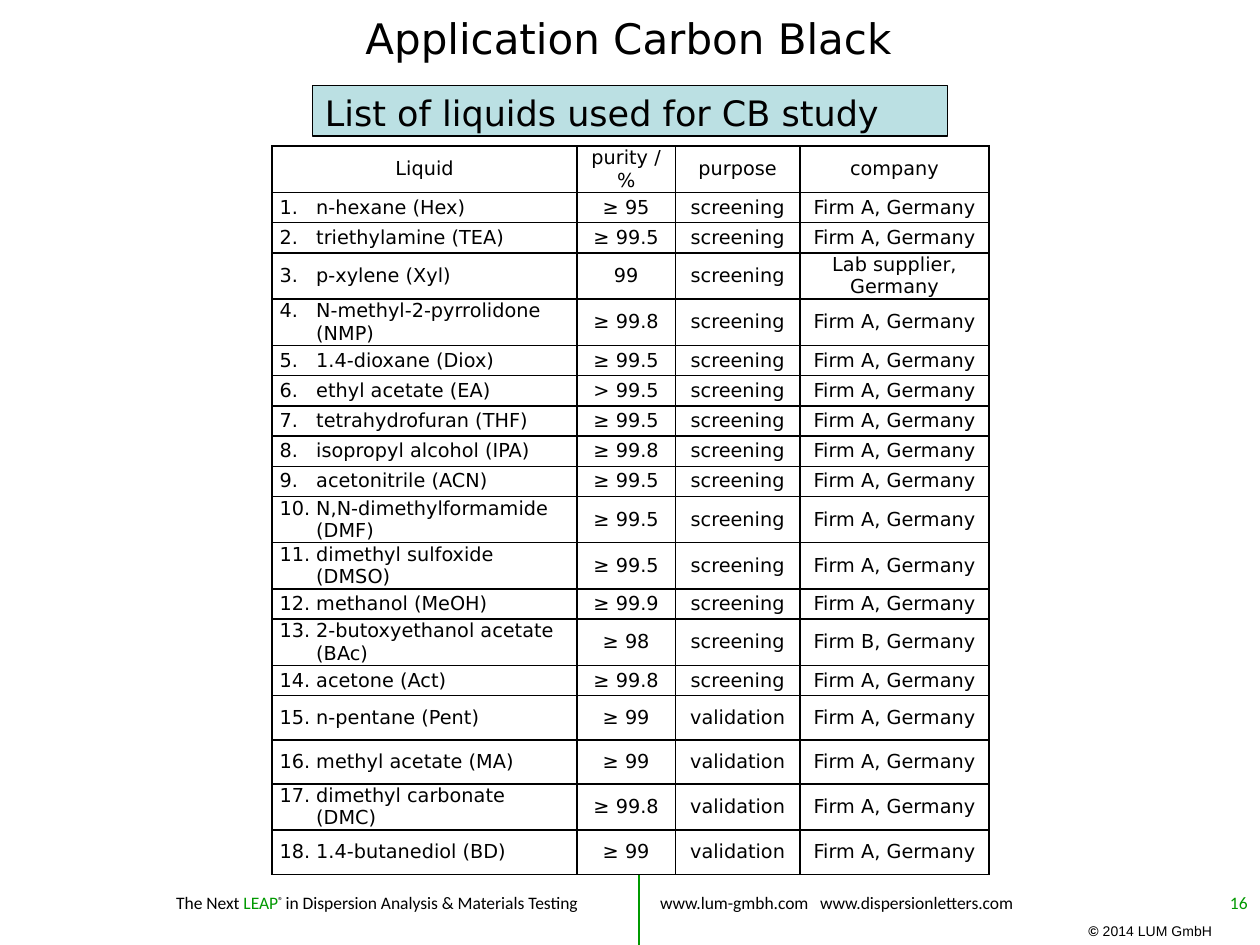
import dataclasses
import itertools

import lxml.etree
import pptx
import pptx.dml.color
import pptx.enum.shapes
import pptx.enum.text
import pptx.oxml.ns
import pptx.util

ALIGN = pptx.enum.text.PP_ALIGN
ANCHOR = pptx.enum.text.MSO_ANCHOR
FIT = pptx.enum.text.MSO_AUTO_SIZE
qn = pptx.oxml.ns.qn


@dataclasses.dataclass(frozen=True)
class Theme:
    ink: str = "000000"
    accent: str = "009900"
    banner: str = "BBE0E3"
    paper: str = "FFFFFF"
    main: str = "DejaVu Sans"
    foot: str = "Calibri"
    legal: str = "Arial"
    title_size: int = 24
    banner_size: int = 20
    table_size: int = 11
    foot_size: int = 10
    legal_size: int = 8


def rgb(value):
    return pptx.dml.color.RGBColor.from_string(value)


class Deck:
    """Holds the theme and the current slide, measured on a 100 by 75 grid."""

    def __init__(self, theme):
        self.theme = theme
        self.prs = pptx.Presentation()
        self.prs.slide_width = pptx.util.Inches(10)
        self.prs.slide_height = pptx.util.Inches(7.5)
        self.s = self.prs.slides.add_slide(self.prs.slide_layouts[5])

    def grid(self, *units):
        return [round(self.prs.slide_width * u / 100) for u in units]

    def style(self, p, font, size, color=None, align=ALIGN.LEFT):
        p.alignment = align
        p.font.name, p.font.size = font, pptx.util.Pt(size)
        p.font.color.rgb = rgb(color or self.theme.ink)

    def frame(self, sp, wrap=False, fit=FIT.NONE):
        tf = sp.text_frame
        tf.word_wrap, tf.auto_size, tf.vertical_anchor = wrap, fit, ANCHOR.TOP
        return tf.paragraphs[0]

    def title(self, text, *box):
        sp = self.s.shapes.title
        sp.left, sp.top, sp.width, sp.height = self.grid(*box)
        p = self.frame(sp, fit=FIT.SHAPE_TO_FIT_TEXT)
        p.text = text
        self.style(p, self.theme.main, self.theme.title_size)

    def banner(self, text, *box):
        sp = self.s.shapes.add_shape(pptx.enum.shapes.MSO_SHAPE.RECTANGLE, *self.grid(*box))
        sp.shadow.inherit = False
        sp.fill.solid()
        sp.fill.fore_color.rgb = rgb(self.theme.banner)
        sp.line.color.rgb = rgb(self.theme.ink)
        sp.line.width = pptx.util.Pt(0.75)
        p = self.frame(sp)
        p.text = text
        self.style(p, self.theme.main, self.theme.banner_size)

    def note(self, runs, *box, font=None, size=None, wrap=False, fit=FIT.SHAPE_TO_FIT_TEXT,
             align=ALIGN.LEFT, color=None, tab=None):
        p = self.frame(self.s.shapes.add_textbox(*self.grid(*box)), wrap, fit)
        if tab:
            tabs = lxml.etree.SubElement(p._p.get_or_add_pPr(), qn("a:tabLst"))
            lxml.etree.SubElement(tabs, qn("a:tab"), pos=str(self.grid(tab)[0]), algn="l")
        self.style(p, font or self.theme.foot, size or self.theme.foot_size, color, align)
        for text, look in runs:
            r = p.add_run()
            r.text = text
            if "color" in look:
                r.font.color.rgb = rgb(look["color"])
            if "bold" in look:
                r.font.bold = look["bold"]
            if "raised" in look:
                r._r.get_or_add_rPr().set("baseline", str(look["raised"] * 1000))

    def rule(self, *ends):
        line = self.s.shapes.add_connector(pptx.enum.shapes.MSO_CONNECTOR.STRAIGHT, *self.grid(*ends))
        line.line.color.rgb = rgb(self.theme.accent)
        line.line.width = pptx.util.Pt(1)
        lxml.etree.SubElement(line._element.spPr, qn("a:effectLst"))

    def borders(self, cell):
        tc_pr = cell._tc.get_or_add_tcPr()
        for side in ("lnL", "lnR", "lnT", "lnB"):
            ln = lxml.etree.SubElement(tc_pr, qn(f"a:{side}"), w=str(pptx.util.Pt(1)))
            fill = lxml.etree.SubElement(ln, qn("a:solidFill"))
            lxml.etree.SubElement(fill, qn("a:srgbClr"), val=self.theme.ink)

    def cell(self, cell, text, align, filled, hang):
        cell.margin_left = cell.margin_right = self.grid(0.6)[0]
        cell.margin_top = cell.margin_bottom = 0
        cell.vertical_anchor = ANCHOR.MIDDLE
        self.borders(cell)
        if filled:
            cell.fill.solid()
            cell.fill.fore_color.rgb = rgb(self.theme.paper)
        else:
            cell.fill.background()
        p = cell.text_frame.paragraphs[0]
        p.text = text
        if hang:
            indent = self.grid(hang)[0]
            p._p.get_or_add_pPr().set("marL", str(indent))
            p._p.get_or_add_pPr().set("indent", str(-indent))
        self.style(p, self.theme.main, self.theme.table_size, align=align)

    def table(self, rows, left, top, widths, heights, filled_from):
        box = self.grid(left, top, sum(widths), sum(heights))
        table = self.s.shapes.add_table(len(rows), len(widths), *box).table
        table.first_row = table.horz_banding = False
        for column, width in zip(table.columns, self.grid(*widths)):
            column.width = width
        for row, height in zip(table.rows, self.grid(*heights)):
            row.height = height
        for i, j in itertools.product(range(len(rows)), range(len(widths))):
            listed = i > 0 and j == 0
            self.cell(table.cell(i, j), rows[i][j], ALIGN.LEFT if listed else ALIGN.CENTER,
                      i >= filled_from, 2.9 if listed else 0)


USUAL = "Firm A, Germany"
SCREENING = [
    ("n-hexane (Hex)", "≥ 95", USUAL),
    ("triethylamine (TEA)", "≥ 99.5", USUAL),
    ("p‑xylene (Xyl)", "99", "Lab supplier, Germany"),
    ("N-methyl-2-pyrrolidone (NMP)", "≥ 99.8", USUAL),
    ("1.4-dioxane (Diox)", "≥ 99.5", USUAL),
    ("ethyl acetate (EA)", "> 99.5", USUAL),
    ("tetrahydrofuran (THF)", "≥ 99.5", USUAL),
    ("isopropyl alcohol (IPA)", "≥ 99.8", USUAL),
    ("acetonitrile (ACN)", "≥ 99.5", USUAL),
    ("N,N-dimethylformamide (DMF)", "≥ 99.5", USUAL),
    ("dimethyl sulfoxide (DMSO)", "≥ 99.5", USUAL),
    ("methanol (MeOH)", "≥ 99.9", USUAL),
    ("2-butoxyethanol acetate (BAc)", "≥ 98", "Firm B, Germany"),
    ("acetone (Act)", "≥ 99.8", USUAL),
]
VALIDATION = [
    ("n-pentane (Pent)", "≥ 99", USUAL),
    ("methyl acetate (MA)", "≥ 99", USUAL),
    ("dimethyl carbonate (DMC)", "≥ 99.8", USUAL),
    ("1.4-butanediol (BD)", "≥ 99", USUAL),
]


def liquid_rows():
    tagged = [(x, "screening") for x in SCREENING] + [(x, "validation") for x in VALIDATION]
    body = [(f"{n}.\t{name}", purity, purpose, company)
            for n, ((name, purity, company), purpose) in enumerate(tagged, 1)]
    return [("Liquid", "purity / %", "purpose", "company")] + body


def main():
    theme = Theme()
    deck = Deck(theme)
    deck.note([("The Next", {}), (" LEAP", {"color": theme.accent}), ("® ", {"raised": 30}),
               ("in Dispersion Analysis & Materials Testing", {})], 13, 70.3, 39.2, 2.7)
    deck.note([("www.lum-gmbh.com\twww.dispersionletters.com", {})],
              51.4, 70.3, 33.3, 2.7, wrap=True, tab=12.7)
    deck.rule(50.7, 69.2, 50.7, 75)
    deck.note([("©", {"bold": True}), (" 2014 LUM GmbH", {})], 85.4, 72.7, 11.9, 2.4,
              font=theme.legal, size=theme.legal_size)
    deck.note([("16", {})], 79.2, 70.3, 20.8, 5, wrap=True, fit=FIT.NONE,
              align=ALIGN.RIGHT, color=theme.accent)
    head = 1 + len(SCREENING)
    deck.table(liquid_rows(), 21.6, 11.6, [24.2, 7.8, 9.9, 15],
               [2.4] * head + [3.5] * len(VALIDATION), filled_from=head)
    deck.banner("List of liquids used for CB study", 24.8, 6.8, 50.4, 4)
    deck.title("Application Carbon Black", 28, 0.5, 44.1, 5)
    deck.prs.save("out.pptx")


if __name__ == "__main__":
    main()
